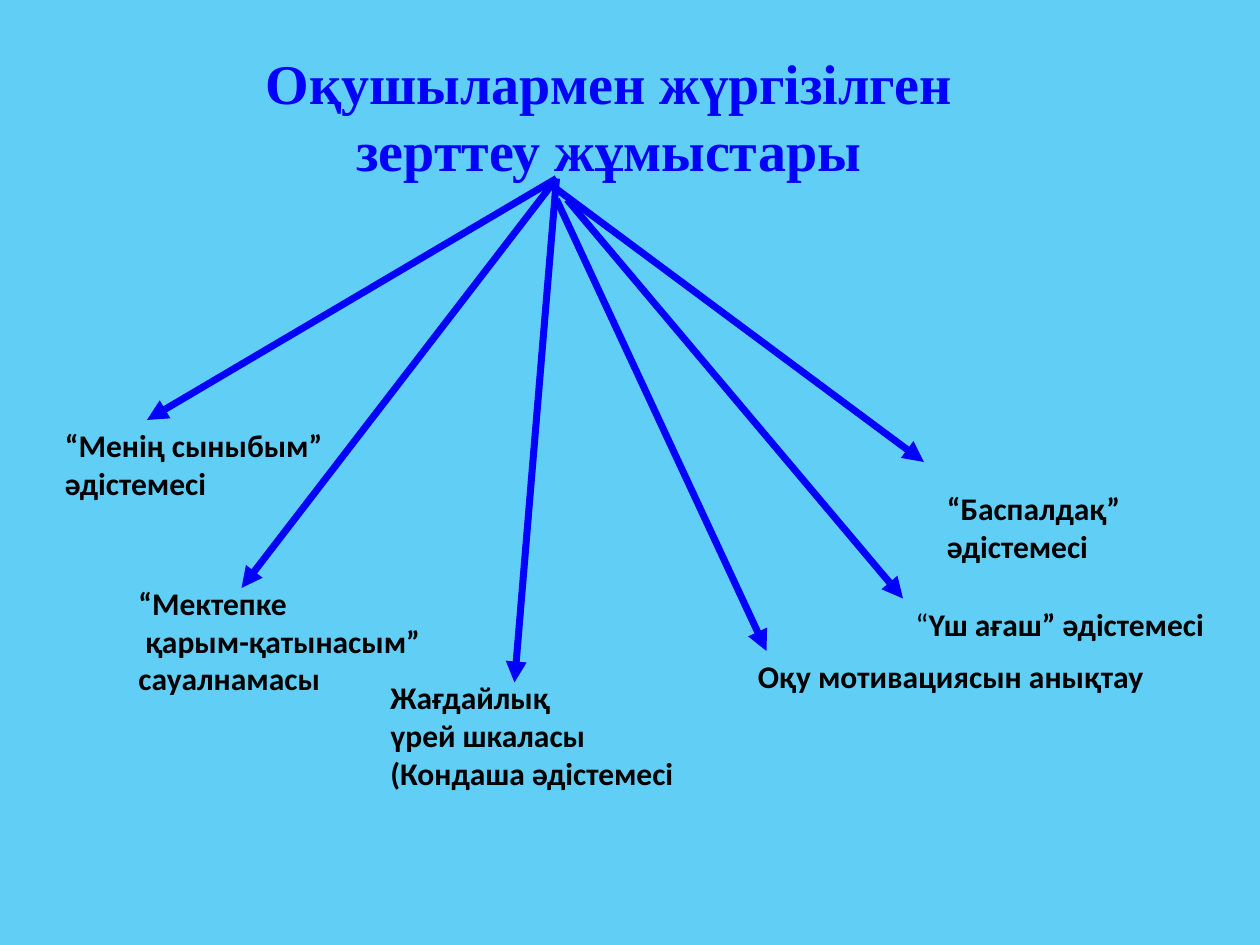
from lxml.etree import SubElement
from pptx import Presentation
from pptx.dml.color import RGBColor
from pptx.enum.shapes import MSO_CONNECTOR as Link
from pptx.enum.text import MSO_ANCHOR as Anchor, MSO_AUTO_SIZE as Fit, PP_ALIGN as Align
from pptx.oxml.ns import qn
from pptx.util import Inches, Pt

HUES = {"sky": "61CEF6", "blue": "0000FF", "ink": "000000"}
COLS, ROWS = 120, 90
WIDE, HIGH = Inches(10), Inches(7.5)

TITLE = ["Оқушылармен жүргізілген", "зерттеу жұмыстары"]

# Arrow start and tip, in columns and rows
RAYS = [
    ((53, 17), (14, 40)),
    ((53, 17), (23, 56)),
    ((53, 17), (49, 65)),
    ((53, 18), (88, 44)),
    ((53, 19), (73, 62)),
    ((54, 19), (86, 57)),
]

# Label box (column, row, columns, rows) and its lines of (text, bold) runs
LABELS = [
    ((5, 40, 30.4, 8.5), [[("“Менің сыныбым”", True)], [("әдістемесі", True)]]),
    ((12, 55, 33, 12.1), [[("“Мектепке", True)], [(" қарым-қатынасым”", True)],
                          [("сауалнамасы", True)]]),
    ((36, 64, 33.2, 12.1), [[("Жағдайлық", True)], [("үрей шкаласы", True)],
                            [("(Кондаша әдістемесі", True)]]),
    ((71, 62, 44.6, 4.8), [[("Оқу мотивациясын анықтау", True)]]),
    ((89, 46, 21.6, 8.5), [[("“Баспалдақ”", True)], [("әдістемесі", True)]]),
    ((86, 57, 33.7, 4.8), [[("“", False), ("Үш ағаш” әдістемесі", True)]]),
]


def hue(name):
    return RGBColor.from_string(HUES[name])


def spot(col, row):
    return round(WIDE * col / COLS), round(HIGH * row / ROWS)


def write(frame, lines, face, size, tint, align):
    for i, line in enumerate(lines):
        para = frame.paragraphs[0] if i == 0 else frame.add_paragraph()
        para.alignment = align
        for text, bold in line:
            run = para.add_run()
            run.text = text
            font = run.font
            font.name, font.size, font.bold = face, Pt(size), bold
            font.color.rgb = hue(tint)


def add_title(slide, box):
    head = slide.shapes.title
    head.left, head.top = spot(*box[:2])
    head.width, head.height = spot(*box[2:])
    frame = head.text_frame
    frame.word_wrap = True
    frame.auto_size = Fit.SHAPE_TO_FIT_TEXT
    frame.vertical_anchor = Anchor.TOP
    lines = [[(text, True)] for text in TITLE]
    write(frame, lines, "Times New Roman", 32, "blue", Align.CENTER)


def add_ray(slide, start, tip):
    ray = slide.shapes.add_connector(Link.STRAIGHT, *spot(*start), *spot(*tip))
    ray.line.color.rgb = hue("blue")
    ray.line.width = Pt(4)
    # Arrowhead, and no shadow
    SubElement(ray.line._get_or_add_ln(), qn("a:tailEnd"), type="triangle")
    SubElement(ray._element.spPr, qn("a:effectLst"))


def add_label(slide, box, lines):
    label = slide.shapes.add_textbox(*spot(*box[:2]), *spot(*box[2:]))
    frame = label.text_frame
    frame.word_wrap = False
    frame.auto_size = Fit.SHAPE_TO_FIT_TEXT
    write(frame, lines, "Calibri", 18, "ink", Align.LEFT)


def main():
    deck = Presentation()
    deck.slide_width, deck.slide_height = WIDE, HIGH
    slide = deck.slides.add_slide(deck.slide_layouts[5])
    back = slide.background.fill
    back.solid()
    back.fore_color.rgb = hue("sky")

    add_title(slide, (11, 4, 94, 14.2))
    for start, tip in RAYS:
        add_ray(slide, start, tip)
    for box, lines in LABELS:
        add_label(slide, box, lines)
    deck.save("out.pptx")


if __name__ == "__main__":
    main()
